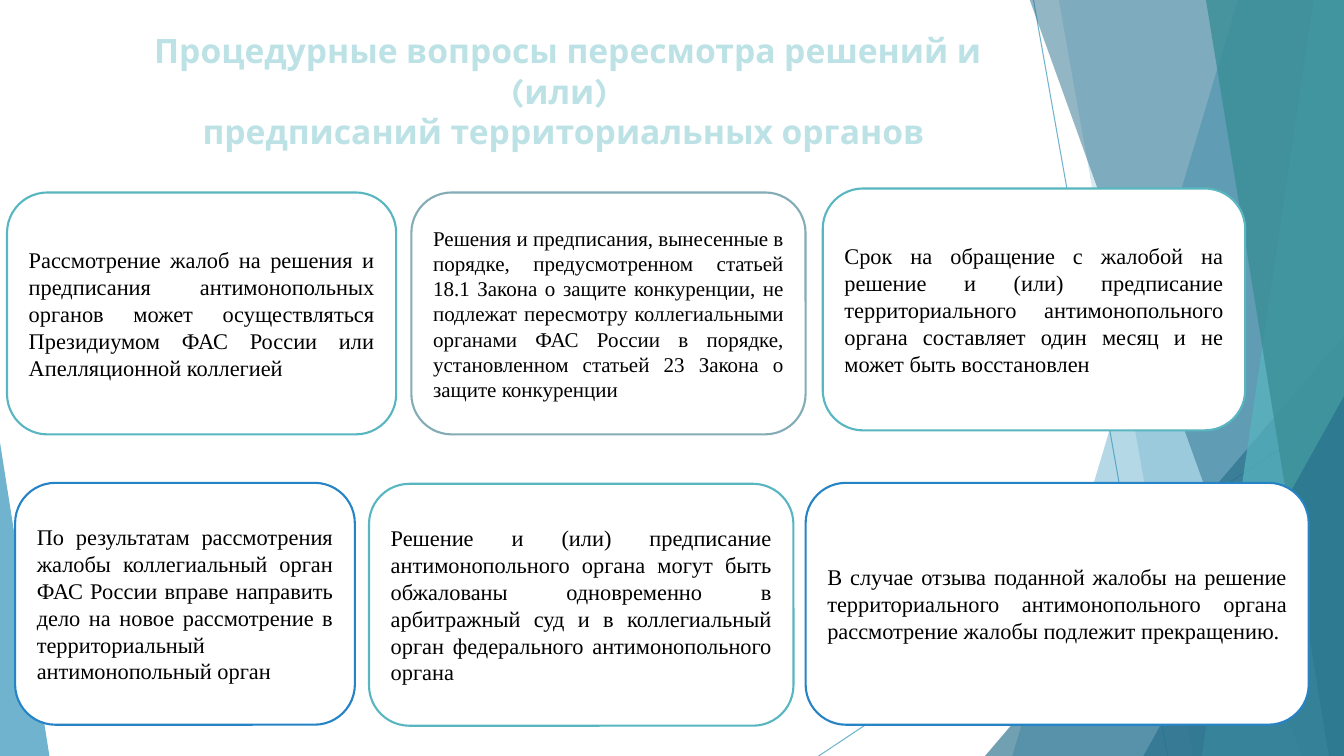
from lxml import etree
from pptx import Presentation
from pptx.dml.color import RGBColor
from pptx.enum.shapes import MSO_CONNECTOR, MSO_SHAPE
from pptx.enum.text import MSO_ANCHOR, MSO_AUTO_SIZE, PP_ALIGN
from pptx.oxml.ns import qn
from pptx.util import Emu, Pt

LINE = MSO_CONNECTOR.STRAIGHT
TRIANGLE = MSO_SHAPE.ISOSCELES_TRIANGLE
ROUNDED = MSO_SHAPE.ROUNDED_RECTANGLE
CENTER, JUSTIFY = PP_ALIGN.CENTER, PP_ALIGN.JUSTIFY
PX = 9144  # EMU in one px, 100 px to the inch
WIDTH, HEIGHT = 1333, 750

COLORS = {
    "blue": "3494BA", "deep": "276F8B", "teal": "58B6C0", "dark teal": "3A8F98",
    "grey": "84ACB6", "bright": "2683C6", "title": "BCE2E6",
    "white": "FFFFFF", "black": "000000",
}

TITLE = [" Процедурные вопросы пересмотра решений и (или) ",
         "предписаний территориальных органов"]
TITLE_BOX = (110, 25, 898, 91)

# Start and end of each thin line
RAYS = [((1025, 0), (1158, 750)), ((1333, 403), (812, 750))]

# Bands reach the right edge: top x, bottom x, color, opacity in percent.
# Triangles reach the bottom: left, top, width, apex position, color, opacity.
FACETS = [
    ("band", 1228, 1004, "blue", 36),
    ("band", 1050, 1183, "blue", 20),
    ("triangle", 977, 333, 356, 1, "deep", 66),
    ("band", 1021, 1291, "deep", 50),
    ("band", 1303, 1192, "teal", 70),
    ("band", 1196, 1318, "dark teal", 80),
    ("triangle", 1134, 393, 199, 1, "deep", 66),
    ("triangle", 0, 439, 49, 0, "blue", 70),
]

# Left, top, width, outline, text size, text
CARD_HEIGHT = 240
CARDS = [
    (816, 187, 419, "teal", 16,
     "Срок на обращение с жалобой на решение и (или) предписание территориального "
     "антимонопольного органа составляет один месяц и не может быть восстановлен"),
    (408, 191, 391, "grey", 15,
     "Решения и предписания, вынесенные в порядке, предусмотренном статьей 18.1 "
     "Закона о защите конкуренции, не подлежат пересмотру коллегиальными органами "
     "ФАС России в порядке, установленном статьей 23 Закона о защите конкуренции"),
    (7, 191, 386, "teal", 16,
     "Рассмотрение жалоб на решения и предписания антимонопольных органов может "
     "осуществляться Президиумом ФАС России или Апелляционной коллегией"),
    (15, 479, 337, "bright", 16,
     "По результатам рассмотрения жалобы коллегиальный орган ФАС России вправе "
     "направить дело на новое рассмотрение в территориальный антимонопольный орган"),
    (366, 480, 421, "teal", 16,
     "Решение и (или) предписание антимонопольного органа могут быть обжалованы "
     "одновременно в арбитражный суд и в коллегиальный орган федерального "
     "антимонопольного органа"),
    (799, 479, 499, "bright", 16,
     "В случае отзыва поданной жалобы на решение территориального "
     "антимонопольного органа рассмотрение жалобы подлежит прекращению."),
]


def px(*lengths):
    return [Emu(length * PX) for length in lengths]


def rgb(name):
    return RGBColor.from_string(COLORS[name])


def set_alpha(fill_parent, percent):
    """Make the solid fill directly below this element partly transparent."""
    color = fill_parent.find(qn("a:solidFill"))[0]
    etree.SubElement(color, qn("a:alpha"), val=str(percent * 1000))


def style_text(paragraph, align, face, size, color):
    paragraph.alignment = align
    paragraph.font.name = face
    paragraph.font.size = Pt(size)
    paragraph.font.color.rgb = rgb(color)


def add_ray(page, start, end):
    ray = page.shapes.add_connector(LINE, *px(*start, *end))
    ray.line.color.rgb = rgb("blue")
    ray.line.width = Pt(0.75)
    properties = ray.line._get_or_add_ln().getparent()
    set_alpha(ray.line._get_or_add_ln(), 70)
    etree.SubElement(properties, qn("a:effectLst"))


def add_facet(page, kind, *geometry, color, opacity):
    if kind == "band":
        top_x, bottom_x = geometry
        builder = page.shapes.build_freeform(top_x, -1, scale=PX)
        builder.add_line_segments([(WIDTH, -1), (WIDTH, HEIGHT), (bottom_x, HEIGHT)])
        facet = builder.convert_to_shape()
    else:
        left, top, width, apex = geometry
        facet = page.shapes.add_shape(TRIANGLE, *px(left, top, width, HEIGHT - top))
        facet.adjustments[0] = apex
    facet.shadow.inherit = False
    facet.fill.solid()
    facet.fill.fore_color.rgb = rgb(color)
    set_alpha(facet._element.spPr, opacity)
    facet.line.fill.background()


def add_title(page):
    box = page.shapes.add_textbox(*px(*TITLE_BOX))
    frame = box.text_frame
    frame.word_wrap = True
    frame.auto_size = MSO_AUTO_SIZE.SHAPE_TO_FIT_TEXT
    frame.text = "\n".join(TITLE)
    for paragraph in frame.paragraphs:
        style_text(paragraph, CENTER, "Karla", 24, "title")
        paragraph.font.bold = True
        outline = etree.Element(qn("a:ln"), w=str(Pt(1.75)))
        fill = etree.SubElement(outline, qn("a:solidFill"))
        etree.SubElement(fill, qn("a:srgbClr"), val=COLORS["teal"])
        paragraph.font._element.insert(0, outline)


def add_card(page, left, top, width, outline, size, text):
    card = page.shapes.add_shape(ROUNDED, *px(left, top, width, CARD_HEIGHT))
    card.shadow.inherit = False
    card.fill.solid()
    card.fill.fore_color.rgb = rgb("white")
    card.line.color.rgb = rgb(outline)
    card.line.width = Pt(1.5)
    frame = card.text_frame
    frame.word_wrap = True
    frame.vertical_anchor = MSO_ANCHOR.MIDDLE
    frame.text = text
    style_text(frame.paragraphs[0], JUSTIFY, "Times New Roman", size, "black")


def main():
    deck = Presentation()
    deck.slide_width, deck.slide_height = px(WIDTH, HEIGHT)
    page = deck.slides.add_slide(deck.slide_layouts[6])
    for start, end in RAYS:
        add_ray(page, start, end)
    for *shape, color, opacity in FACETS:
        add_facet(page, *shape, color=color, opacity=opacity)
    add_title(page)
    for card in CARDS:
        add_card(page, *card)
    deck.save("out.pptx")


if __name__ == "__main__":
    main()
